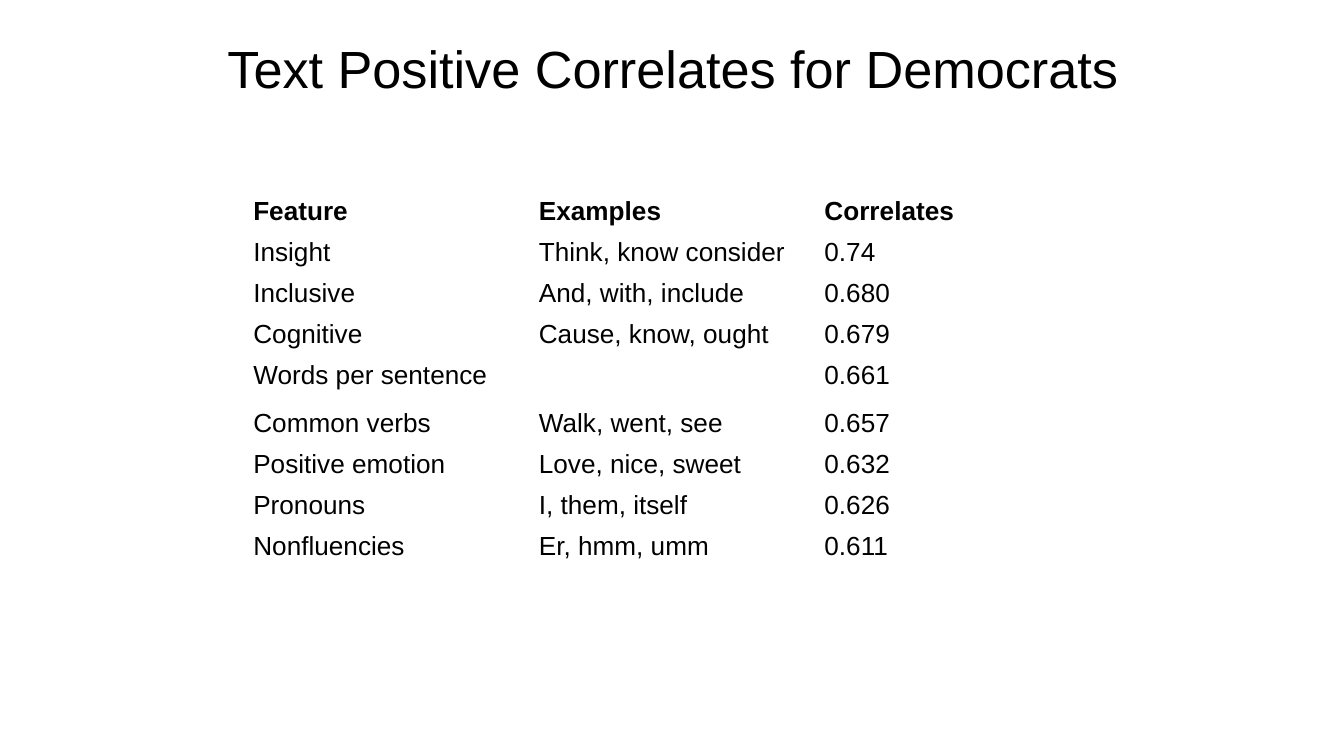
import pptx
import pptx.dml.color
import pptx.enum.text
import pptx.util

SCALE = 4572
BLACK = pptx.dml.color.RGBColor(0, 0, 0)
FONT = "Arial"
ROWS = [
    ("Feature", "Examples", "Correlates"),
    ("Insight", "Think, know consider", "0.74"),
    ("Inclusive", "And, with, include", "0.680"),
    ("Cognitive", "Cause, know, ought", "0.679"),
    ("Words per sentence", "", "0.661"),
    ("Common verbs", "Walk, went, see", "0.657"),
    ("Positive emotion", "Love, nice, sweet", "0.632"),
    ("Pronouns", "I, them, itself", "0.626"),
    ("Nonfluencies", "Er, hmm, umm", "0.611"),
]


def px(n):
    return pptx.util.Emu(n * SCALE)


def style(frame, size, bold=False):
    for para in frame.paragraphs:
        for run in para.runs:
            run.font.name = FONT
            run.font.size = pptx.util.Pt(size)
            run.font.bold = bold
            run.font.color.rgb = BLACK


def inset(part, side, edge):
    part.margin_left = part.margin_right = px(side)
    part.margin_top = part.margin_bottom = px(edge)


def title(slide, box, text):
    frame = slide.shapes.add_textbox(*map(px, box)).text_frame
    frame.word_wrap = True
    frame.vertical_anchor = pptx.enum.text.MSO_ANCHOR.MIDDLE
    inset(frame, 14, 7)
    frame.text = text
    frame.paragraphs[0].alignment = pptx.enum.text.PP_ALIGN.CENTER
    style(frame, 28)


def table(slide, box, rows):
    shape = slide.shapes.add_table(len(rows), len(rows[0]), *map(px, box))
    grid = shape.table
    grid.first_row = grid.horz_banding = False
    for r, row in enumerate(rows):
        for c, text in enumerate(row):
            cell = grid.cell(r, c)
            cell.fill.background()
            inset(cell, 15, 6)
            cell.text_frame.text = text
            style(cell.text_frame, 14, r == 0)


def main():
    deck = pptx.Presentation()
    deck.slide_width, deck.slide_height = px(2000), px(1125)
    slide = deck.slides.add_slide(deck.slide_layouts[6])
    title(slide, (100, 44, 1802, 114), "Text Positive Correlates for Democrats")
    table(slide, (362, 287, 1275, 61 * len(ROWS)), ROWS)
    deck.save("out.pptx")


if __name__ == "__main__":
    main()
